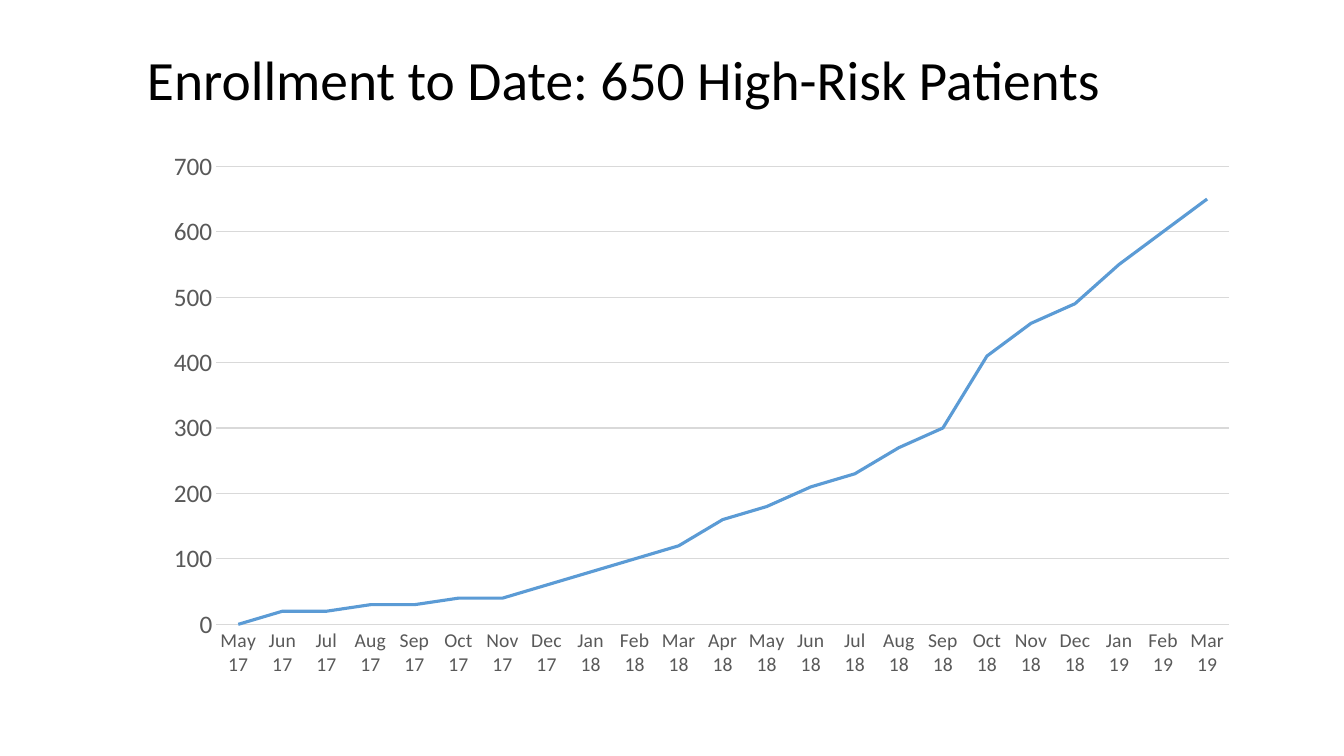
import dataclasses

import pptx
import pptx.chart.data
import pptx.dml.color
import pptx.enum.chart
import pptx.enum.text
import pptx.oxml
import pptx.oxml.ns
import pptx.util
from pptx.util import Inches


@dataclasses.dataclass
class Theme:
    font: str = "Calibri"
    title_color: str = "000000"
    label_color: str = "595959"
    rule_color: str = "D9D9D9"
    line_color: str = "5B9BD5"
    title_size: float = 39.6
    chart_size: float = 10
    month_size: float = 14
    count_size: float = 18
    rule_width: float = 0.75
    line_width: float = 2.25


class SlideBuilder:
    def __init__(self, slide, theme):
        self.slide = slide
        self.theme = theme

    def style_font(self, font, size, color):
        font.name = self.theme.font
        font.size = pptx.util.Pt(size)
        font.bold = False
        font.color.rgb = pptx.dml.color.RGBColor.from_string(color)

    def style_line(self, line, color, width):
        line.color.rgb = pptx.dml.color.RGBColor.from_string(color)
        line.width = pptx.util.Pt(width)

    def title(self, text, left, top, width, height):
        frame = self.slide.shapes.add_textbox(left, top, width, height).text_frame
        frame.word_wrap = True
        frame.vertical_anchor = pptx.enum.text.MSO_ANCHOR.MIDDLE
        frame.text = text
        heading = frame.paragraphs[0]
        heading.line_spacing = 0.9
        self.style_font(heading.runs[0].font, self.theme.title_size,
                        self.theme.title_color)

    def line_chart(self, categories, name, values, left, top, width, height):
        theme = self.theme
        data = pptx.chart.data.CategoryChartData()
        data.categories = categories
        data.add_series(name, values)
        chart = self.slide.shapes.add_chart(
            pptx.enum.chart.XL_CHART_TYPE.LINE, left, top, width, height, data).chart
        chart.has_title = False
        chart.has_legend = False
        self.style_font(chart.font, theme.chart_size, theme.title_color)

        # Enrollment line
        plot = chart.plots[0]
        plot.vary_by_categories = False
        enrollment = plot.series[0]
        enrollment.smooth = False
        enrollment.marker.style = pptx.enum.chart.XL_MARKER_STYLE.NONE
        self.style_line(enrollment.format.line, theme.line_color, theme.line_width)

        # Axes
        months, counts = chart.category_axis, chart.value_axis
        for axis, size in ((months, theme.month_size), (counts, theme.count_size)):
            axis.major_tick_mark = pptx.enum.chart.XL_TICK_MARK.NONE
            axis.minor_tick_mark = pptx.enum.chart.XL_TICK_MARK.NONE
            self.style_font(axis.tick_labels.font, size, theme.label_color)
        self.style_line(months.format.line, theme.rule_color, theme.rule_width)
        counts.format.line.fill.background()
        counts.minimum_scale, counts.maximum_scale = 0, 700
        counts.major_unit = 100
        counts.has_major_gridlines = True
        self.style_line(counts.major_gridlines.format.line,
                        theme.rule_color, theme.rule_width)
        return chart

    def place_plot(self, chart, **fractions):
        """Fix the inner plot area as fractions (x, y, w, h) of the chart."""
        plot_area = chart._chartSpace.chart.plotArea
        for layout in plot_area.findall(pptx.oxml.ns.qn("c:layout")):
            plot_area.remove(layout)
        modes = '<c:xMode val="edge"/><c:yMode val="edge"/>'
        sizes = "".join(f'<c:{key} val="{value}"/>' for key, value in fractions.items())
        plot_area.insert(0, pptx.oxml.parse_xml(
            f'<c:layout {pptx.oxml.ns.nsdecls("c")}><c:manualLayout>'
            f'<c:layoutTarget val="inner"/>{modes}{sizes}'
            '</c:manualLayout></c:layout>'))


MONTHS = "Jan Feb Mar Apr May Jun Jul Aug Sep Oct Nov Dec".split()
ENROLLED = [0, 20, 20, 30, 30, 40, 40, 60, 80, 100, 120, 160,
            180, 210, 230, 270, 300, 410, 460, 490, 550, 600, 650]
FIRST_MONTH = MONTHS.index("May")
FIRST_YEAR = 17


def month_label(offset):
    years, month = divmod(FIRST_MONTH + offset, len(MONTHS))
    return f"{MONTHS[month]} {FIRST_YEAR + years}"


def main():
    presentation = pptx.Presentation()
    presentation.slide_width = Inches(13.33)
    presentation.slide_height = Inches(7.5)
    slide = presentation.slides.add_slide(presentation.slide_layouts[6])
    builder = SlideBuilder(slide, Theme())

    # Title
    builder.title("Enrollment to Date: 650 High-Risk Patients",
                  Inches(1.36), Inches(0.52), Inches(10.5), Inches(0.59))

    # Cumulative enrollment by month
    enrollment_chart = builder.line_chart(
        [month_label(offset) for offset in range(len(ENROLLED))], "Series 1", ENROLLED,
        Inches(1.49), Inches(1.38), Inches(10.92), Inches(5.41))
    builder.place_plot(enrollment_chart, x=0.06, y=0.05, w=0.92, h=0.84)

    presentation.save("out.pptx")


if __name__ == "__main__":
    main()
